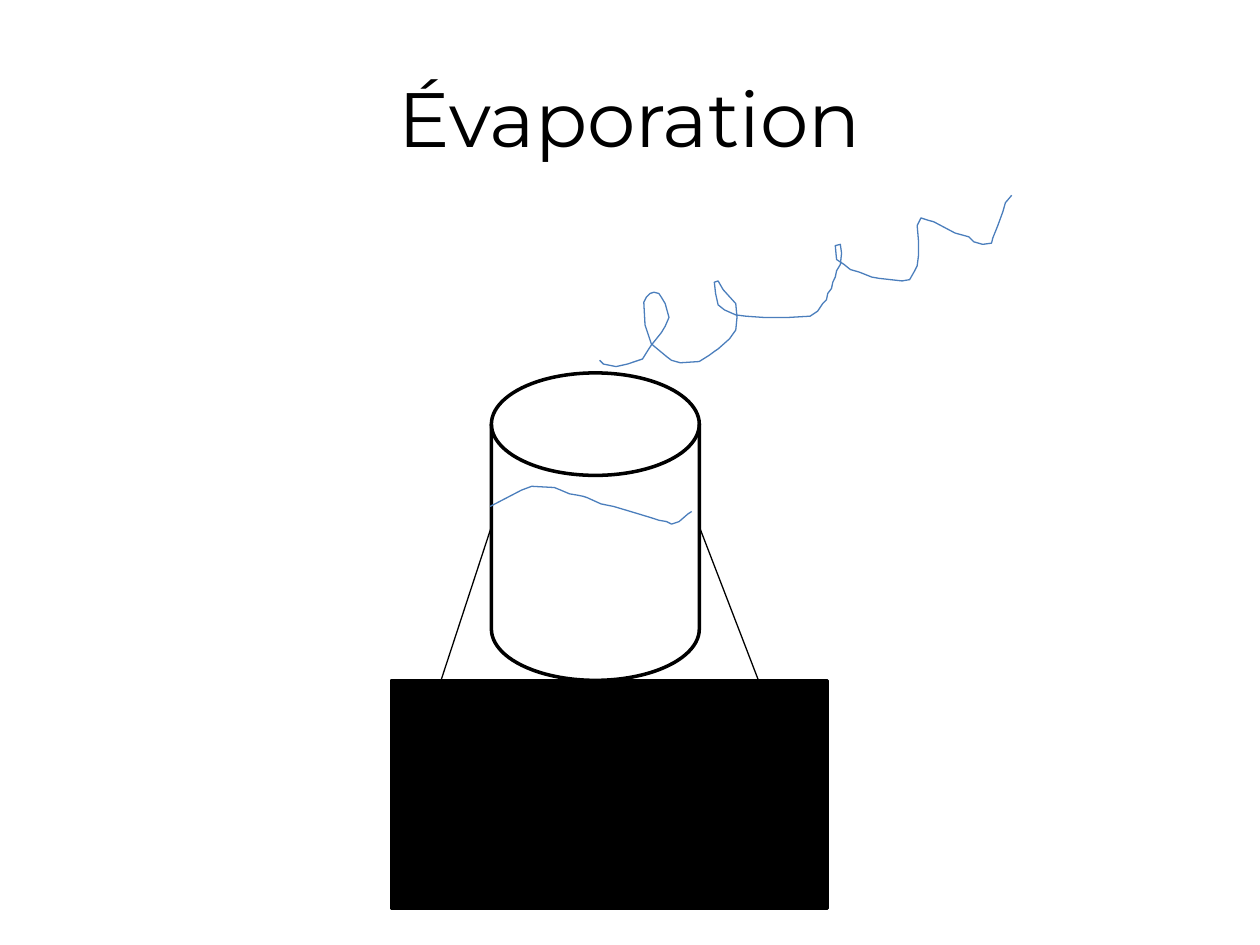
from lxml.etree import SubElement
from pptx import Presentation
from pptx.dml.color import RGBColor
from pptx.enum.shapes import MSO_CONNECTOR as Link, MSO_SHAPE as Form
from pptx.enum.text import MSO_ANCHOR as Anchor, PP_ALIGN as Align
from pptx.oxml.ns import qn
from pptx.util import Emu, Pt

SCALE = 9144  # EMU in one px, 100 px to the inch
BLACK, WHITE, BLUE = "000000", "FFFFFF", "4B7EBC"

WATER = [
    (1, 17), (26, 4), (34, 1), (52, 2), (57, 4), (64, 7), (70, 8), (75, 9),
    (78, 10), (89, 15), (99, 17), (119, 23), (129, 26), (135, 28), (141, 29),
    (145, 31), (151, 29), (158, 23), (161, 21),
]
STEAM = [
    (0, 131), (3, 134), (13, 136), (22, 134), (34, 130), (39, 122), (41, 119),
    (49, 109), (52, 104), (55, 97), (52, 86), (49, 81), (47, 78), (43, 77),
    (40, 78), (37, 81), (35, 85), (36, 103), (41, 118), (53, 128), (57, 131),
    (64, 133), (79, 132), (87, 127), (91, 124), (94, 122), (103, 114),
    (108, 107), (109, 97), (108, 86), (98, 75), (94, 68), (91, 69), (92, 78),
    (94, 87), (99, 91), (108, 95), (116, 96), (130, 97), (150, 97), (167, 96),
    (173, 92), (177, 86), (180, 83), (181, 78), (184, 74), (185, 69),
    (187, 65), (188, 60), (191, 55), (192, 46), (191, 39), (187, 40),
    (188, 51), (194, 55), (199, 59), (206, 61), (216, 65), (222, 66),
    (240, 68), (246, 67), (250, 60), (252, 56), (253, 48), (253, 36),
    (252, 24), (255, 18), (261, 20), (265, 21), (282, 30), (293, 33),
    (297, 37), (304, 39), (311, 38), (312, 34), (316, 24), (320, 13),
    (322, 6), (327, 0),
]


def px(*nums):
    return [Emu(n * SCALE) for n in nums]


def tint(code):
    return RGBColor.from_string(code)


def edge(item, color, width):
    item.line.color.rgb = tint(color)
    item.line.width = Pt(width)


def title(slide, x, y, w, h):
    frame = slide.shapes.add_textbox(*px(x, y, w, h)).text_frame
    frame.word_wrap = True
    frame.vertical_anchor = Anchor.MIDDLE
    frame.text = "Évaporation"
    para = frame.paragraphs[0]
    para.alignment = Align.CENTER
    font = para.runs[0].font
    font.name, font.size = "Montserrat", Pt(44)
    font.color.rgb = tint(BLACK)


def solid(slide, form, fill, x, y, w, h):
    shape = slide.shapes.add_shape(form, *px(x, y, w, h))
    shape.shadow.inherit = False
    shape.fill.solid()
    shape.fill.fore_color.rgb = tint(fill)
    edge(shape, BLACK, 2)


def curve(slide, points, x, y):
    """Draw an open blue outline whose points count from x, y."""
    pen = slide.shapes.build_freeform(*points[0], scale=SCALE)
    pen.add_line_segments(points[1:], close=False)
    shape = pen.convert_to_shape(*px(x, y))
    shape.shadow.inherit = False
    shape.fill.background()
    edge(shape, BLUE, 0.75)


def strut(slide, x1, y1, x2, y2):
    line = slide.shapes.add_connector(Link.STRAIGHT, *px(x1, y1, x2, y2))
    SubElement(line._element.spPr, qn("a:effectLst"))
    edge(line, BLACK, 0.75)


def scene(slide, x, y):
    """Place the stand, the beaker, its water and the rising steam."""
    base, mid = y + 385, y + 263
    left, right = x + 79, x + 244
    solid(slide, Form.RECTANGLE, BLACK, x, base, 346, 181)
    solid(slide, Form.FLOWCHART_MAGNETIC_DISK, WHITE,
          left, y + 141, right - left, base - y - 141)
    curve(slide, WATER, x + 77, y + 230)
    curve(slide, STEAM, x + 165, y)
    strut(slide, left, mid, x + 39, base)
    strut(slide, right, mid, x + 291, base)


def main():
    deck = Presentation()
    deck.slide_width, deck.slide_height = px(1000, 750)
    slide = deck.slides.add_slide(deck.slide_layouts[6])
    title(slide, 50, 30, 900, 125)
    scene(slide, 311, 155)
    deck.save("out.pptx")


if __name__ == "__main__":
    main()
